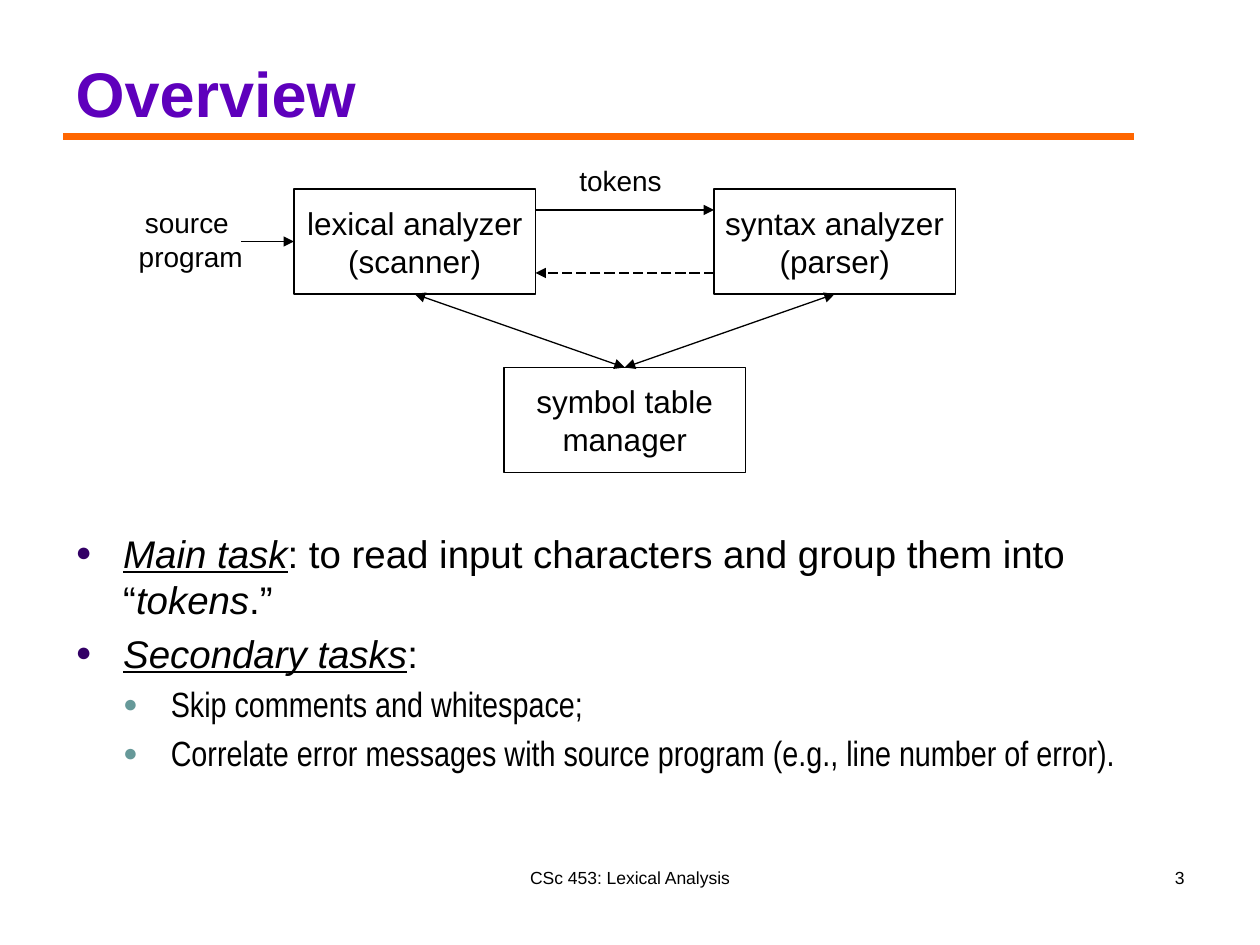
from lxml import etree
from pptx import Presentation
from pptx.dml.color import RGBColor
from pptx.enum.dml import MSO_LINE
from pptx.enum.shapes import MSO_CONNECTOR, MSO_SHAPE
from pptx.enum.text import MSO_ANCHOR, MSO_AUTO_SIZE, PP_ALIGN
from pptx.oxml.ns import qn
from pptx.util import Pt

LEFT, CENTER, RIGHT = PP_ALIGN.LEFT, PP_ALIGN.CENTER, PP_ALIGN.RIGHT
TOP, MIDDLE, BOTTOM = MSO_ANCHOR.TOP, MSO_ANCHOR.MIDDLE, MSO_ANCHOR.BOTTOM
STRAIGHT, RECT = MSO_CONNECTOR.STRAIGHT, MSO_SHAPE.RECTANGLE
NO_FIT, DASH = MSO_AUTO_SIZE.NONE, MSO_LINE.LONG_DASH
BLACK = RGBColor(0, 0, 0)
PURPLE = RGBColor(0x5E, 0x00, 0xBC)
ORANGE = RGBColor(0xFF, 0x66, 0x00)
BULLETS = "330066", "669999"

deck = Presentation()
deck.slide_width, deck.slide_height = Pt(720), Pt(540)
slide = deck.slides.add_slide(deck.slide_layouts[1])
shapes = slide.shapes


def write(shape, text, size, align, anchor=TOP, wrap=False):
    frame = shape.text_frame
    frame.text = text
    frame.word_wrap = wrap
    frame.vertical_anchor = anchor
    for para in frame.paragraphs:
        para.alignment = align
        para.font.size = Pt(size)
        para.font.name = "Arial"
        para.font.color.rgb = BLACK


def draw(x1, y1, x2, y2, ends=(), color=BLACK, width=0.75):
    line = shapes.add_connector(STRAIGHT, Pt(x1), Pt(y1), Pt(x2), Pt(y2))
    line.line.color.rgb = color
    line.line.width = Pt(width)
    for end in ends:
        etree.SubElement(line.line._get_or_add_ln(), qn(f"a:{end}"), type="triangle")
    etree.SubElement(line._element.spPr, qn("a:effectLst"))
    return line


# Title and rule
draw(36, 78, 648, 78, color=ORANGE, width=3.75)
title = shapes.title
title.left, title.top, title.width, title.height = Pt(36), Pt(9.5), Pt(648), Pt(68.5)
write(title, "Overview", 36, LEFT, BOTTOM, True)
font = title.text_frame.paragraphs[0].font
font.bold = True
font.color.rgb = PURPLE

# Task list: level, size, font, runs of (text, italic, underline)
tasks = [
    (0, 22, "Arial", [("Main task", True, True),
                      (": to read input characters and group them into “", False, False),
                      ("tokens", True, False), (".”", False, False)]),
    (0, 22, "Arial", [("Secondary tasks", True, True), (":", False, False)]),
    (1, 20, "Arial Narrow", [("Skip comments and whitespace;", False, False)]),
    (1, 20, "Arial Narrow", [("Correlate error messages with source program "
                              "(e.g., line number of error).", False, False)]),
]
body = slide.placeholders[1]
body.left, body.top, body.width, body.height = Pt(36), Pt(299), Pt(648), Pt(183.5)
frame = body.text_frame
frame.auto_size = NO_FIT
for i, (level, size, face, runs) in enumerate(tasks):
    para = frame.add_paragraph() if i else frame.paragraphs[0]
    para.level = level
    para.space_before = Pt(size * 0.2)
    para.font.size = Pt(size)
    para.font.name = face
    para.font.color.rgb = BLACK
    for text, slant, under in runs:
        run = para.add_run()
        run.text = text
        if slant:
            run.font.italic = True
        if under:
            run.font.underline = True
    props = para._p.get_or_add_pPr()
    props.set("marL", str(Pt(27.2 * (level + 1))))
    props.set("indent", str(-Pt(27.2)))
    tint = etree.Element(qn("a:buClr"))
    etree.SubElement(tint, qn("a:srgbClr"), val=BULLETS[level])
    marks = [tint,
             etree.Element(qn("a:buSzPct"), val="70000"),
             etree.Element(qn("a:buFont"), typeface="Arial"),
             etree.Element(qn("a:buChar"), char="●")]
    spot = props.index(props.find(qn("a:spcBef"))) + 1
    props[spot:spot] = marks

# Diagram boxes
boxes = []
for x, y, text in [(168, 108, "lexical analyzer\n(scanner)"),
                   (408, 108, "syntax analyzer\n(parser)"),
                   (288, 210, "symbol table\nmanager")]:
    box = shapes.add_shape(RECT, Pt(x), Pt(y), Pt(138), Pt(60))
    box.shadow.inherit = False
    box.fill.background()
    box.line.color.rgb = BLACK
    box.line.width = Pt(0.75)
    write(box, text, 18, CENTER, MIDDLE)
    boxes.append(box)
lexer, parser, table = boxes

# Arrows
feed = draw(138, 138, 168, 138, ["tailEnd"])
feed.end_connect(lexer, 1)
draw(306, 120, 408, 120, ["tailEnd"])
back = draw(408, 156, 306, 156)
back.line.dash_style = DASH
etree.SubElement(back.line._get_or_add_ln(), qn("a:tailEnd"), type="triangle")
for box, x in (lexer, 237), (parser, 477):
    link = draw(x, 168, 357, 210, ["headEnd", "tailEnd"])
    link.begin_connect(box, 2)
    link.end_connect(table, 0)

# Labels and footer
for x, y, w, h, text, size, align, wrap in [
        (72, 114, 74, 46, "source \nprogram", 16, CENTER, False),
        (324, 90, 62, 26.6, "tokens", 16, LEFT, False),
        (246, 492, 228, 36, "CSc 453: Lexical Analysis", 10, CENTER, True),
        (516, 492, 168, 36, "3", 10, RIGHT, True)]:
    label = shapes.add_textbox(Pt(x), Pt(y), Pt(w), Pt(h))
    write(label, text, size, align, wrap=wrap)

deck.save("out.pptx")
